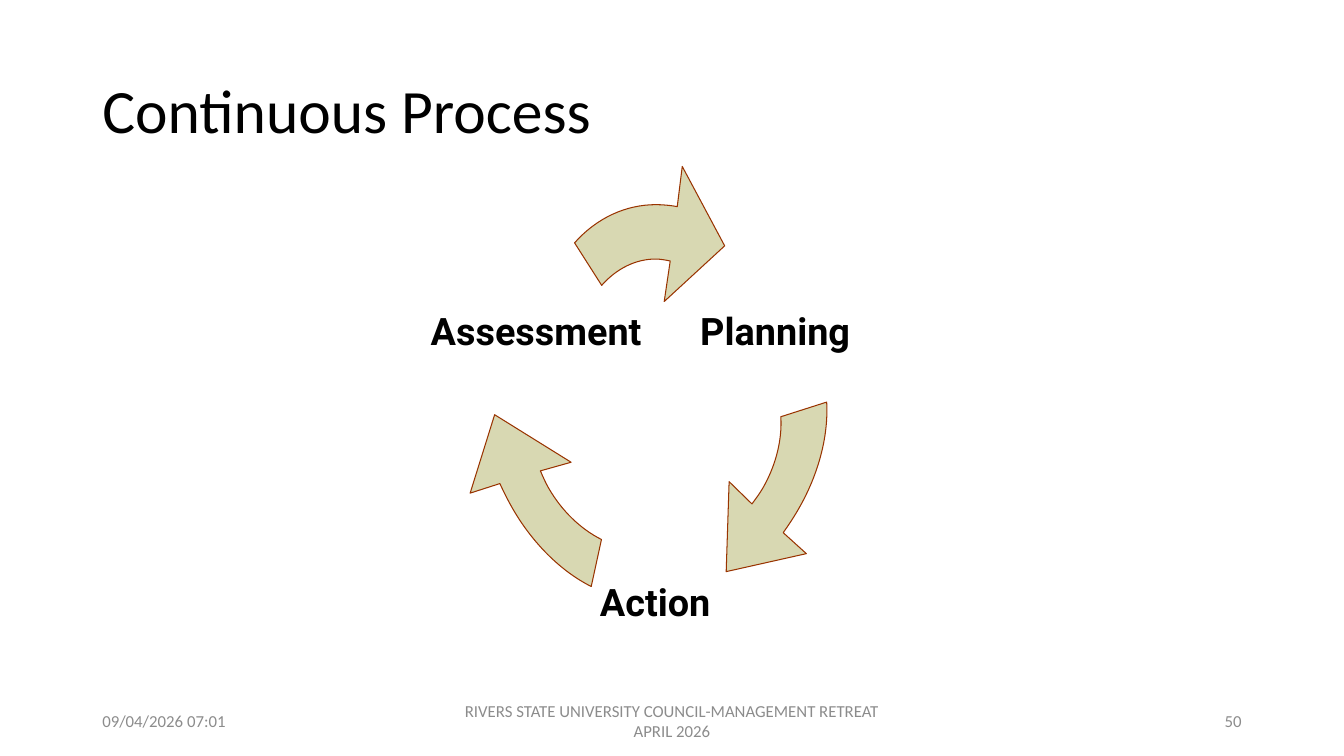
from lxml.etree import SubElement
from pptx import Presentation
from pptx.dml.color import RGBColor
from pptx.enum.text import MSO_ANCHOR, PP_ALIGN
from pptx.oxml.ns import qn
from pptx.util import Pt

COLORS = {"text": "000000", "footer": "8C8C8C", "arrow": "808000", "outline": "993300"}
GRID = 1000
ARROW_PATH = [
    ("moveTo", [(558, 171)]),
    ("cubicBezTo", [(538, 168), (518, 165), (500, 165)]),
    ("cubicBezTo", [(422, 165), (345, 193), (285, 245)]),
    ("lnTo", [(177, 116)]),
    ("cubicBezTo", [(265, 40), (382, 0), (500, 0)]),
    ("cubicBezTo", [(528, 0), (557, 2), (586, 6)]),
    ("lnTo", [(606, -116)]),
    ("lnTo", [(775, 125)]),
    ("lnTo", [(534, 294)]),
    ("close", []),
]


class CycleSlide:
    def __init__(self, prs):
        self.s = prs.slides.add_slide(prs.slide_layouts[6])

    def text(self, box, text, size, color="text", font="Calibri", align=PP_ALIGN.LEFT):
        sp = self.s.shapes.add_textbox(*map(Pt, box))
        tf = sp.text_frame
        tf.text = text
        tf.word_wrap = True
        tf.vertical_anchor = MSO_ANCHOR.MIDDLE
        p = tf.paragraphs[0]
        p.alignment = align
        r = p.runs[0]
        r.font.size = Pt(size)
        r.font.name = font
        r.font.color.rgb = RGBColor.from_string(COLORS[color])
        return tf

    def title(self, box, text):
        tf = self.text(box, text, 44)
        tf.paragraphs[0].line_spacing = 0.9

    def footer(self, left, width, text, align):
        self.text((left, 500.4, width, 28.8), text, 12, "footer", align=align)

    def stage(self, center, top, text):
        width = 160
        box = (center - width / 2, top, width, 94.3)
        tf = self.text(box, text, 27, font="Roboto", align=PP_ALIGN.CENTER)
        tf.margin_left = tf.margin_right = tf.margin_top = tf.margin_bottom = 0
        tf.paragraphs[0].runs[0].font.bold = True

    def arrow(self, left, top, width, height, rotation):
        scale = (Pt(width) / GRID, Pt(height) / GRID)
        builder = self.s.shapes.build_freeform(0, 0, scale)
        builder.add_line_segments([(GRID, 0), (GRID, GRID), (0, GRID)])
        sp = builder.convert_to_shape(Pt(left), Pt(top))
        path = next(sp.element.iter(qn("a:path")))
        for step in list(path):
            path.remove(step)
        for command, points in ARROW_PATH:
            step = SubElement(path, qn("a:" + command))
            for x, y in points:
                SubElement(step, qn("a:pt"), x=str(x), y=str(y))
        sp.rotation = rotation
        sp.shadow.inherit = False
        sp.fill.solid()
        sp.fill.fore_color.rgb = RGBColor.from_string(COLORS["arrow"])
        fill_color = next(sp.element.spPr.iter(qn("a:srgbClr")))
        SubElement(fill_color, qn("a:alpha"), val="30000")
        sp.line.color.rgb = RGBColor.from_string(COLORS["outline"])
        sp.line.width = Pt(0.75)


def main():
    prs = Presentation()
    prs.slide_width, prs.slide_height = Pt(960), Pt(540)
    slide = CycleSlide(prs)

    slide.title((66, 28.8, 828, 104.4), "Continuous Process")
    slide.footer(66, 216, "09/04/2026 07:01", PP_ALIGN.LEFT)
    slide.footer(
        318, 324, "RIVERS STATE UNIVERSITY COUNCIL-MANAGEMENT RETREAT APRIL 2026", PP_ALIGN.CENTER
    )
    slide.footer(678, 216, "50", PP_ALIGN.RIGHT)

    short, long = 179.3, 235.4
    slide.arrow(378.7, 146.2, short, long, 0)
    slide.arrow(375.1, 229, long, short, 120)
    slide.arrow(326.2, 229, long, short, 240)

    slide.stage(553.7, 188.6, "Planning")
    slide.stage(468, 382.3, "Action")
    slide.stage(383, 188.6, "Assessment")

    prs.save("out.pptx")


if __name__ == "__main__":
    main()
